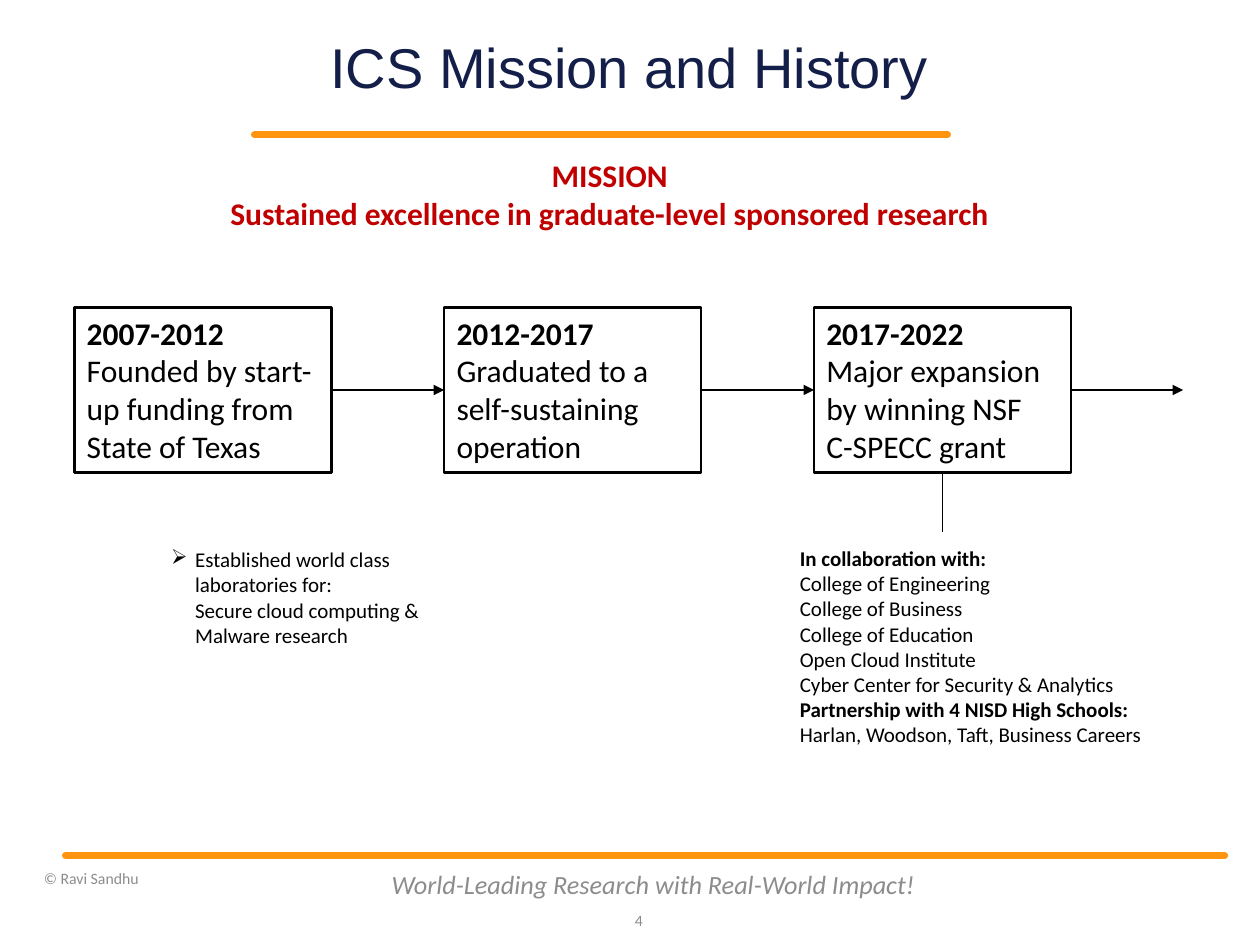
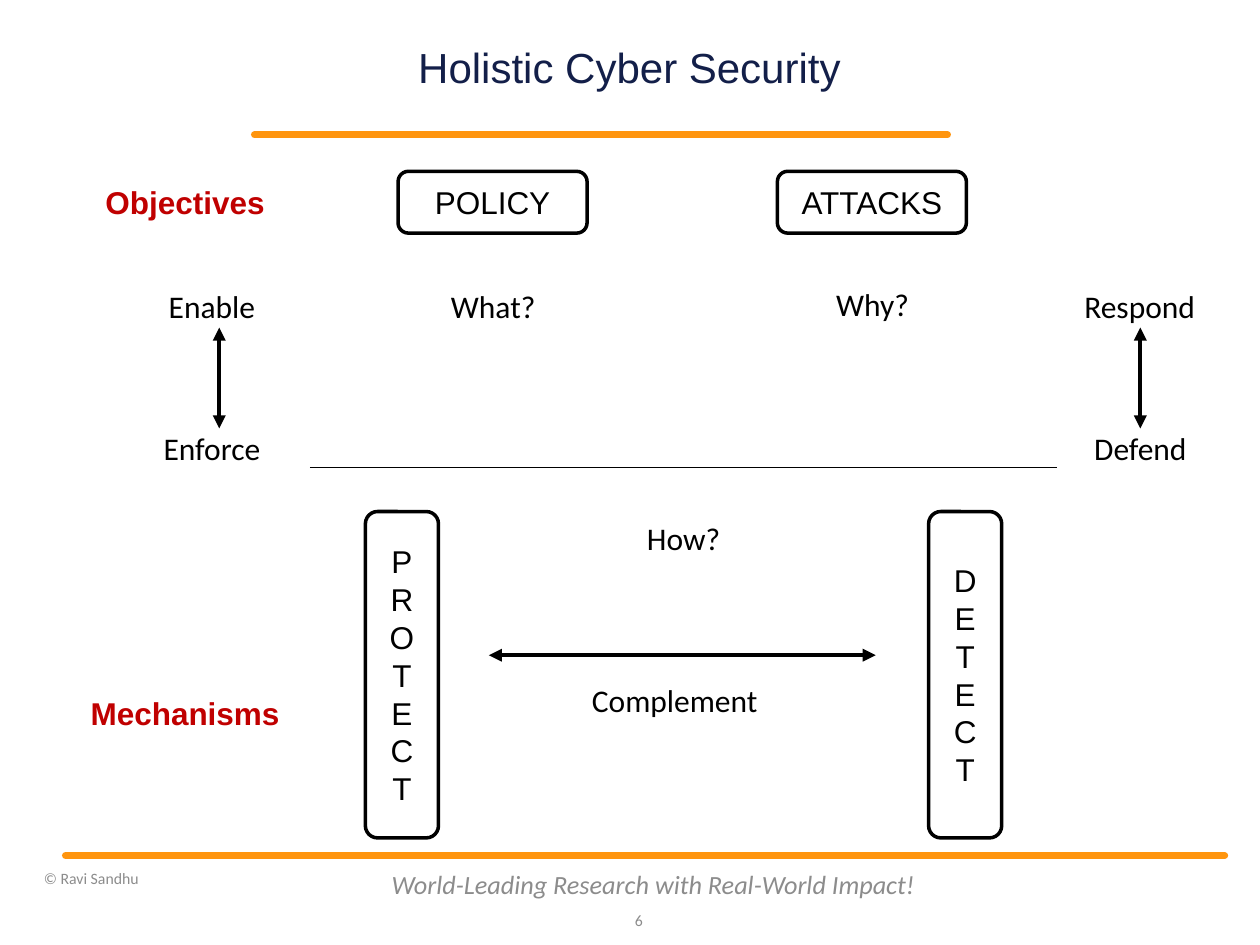
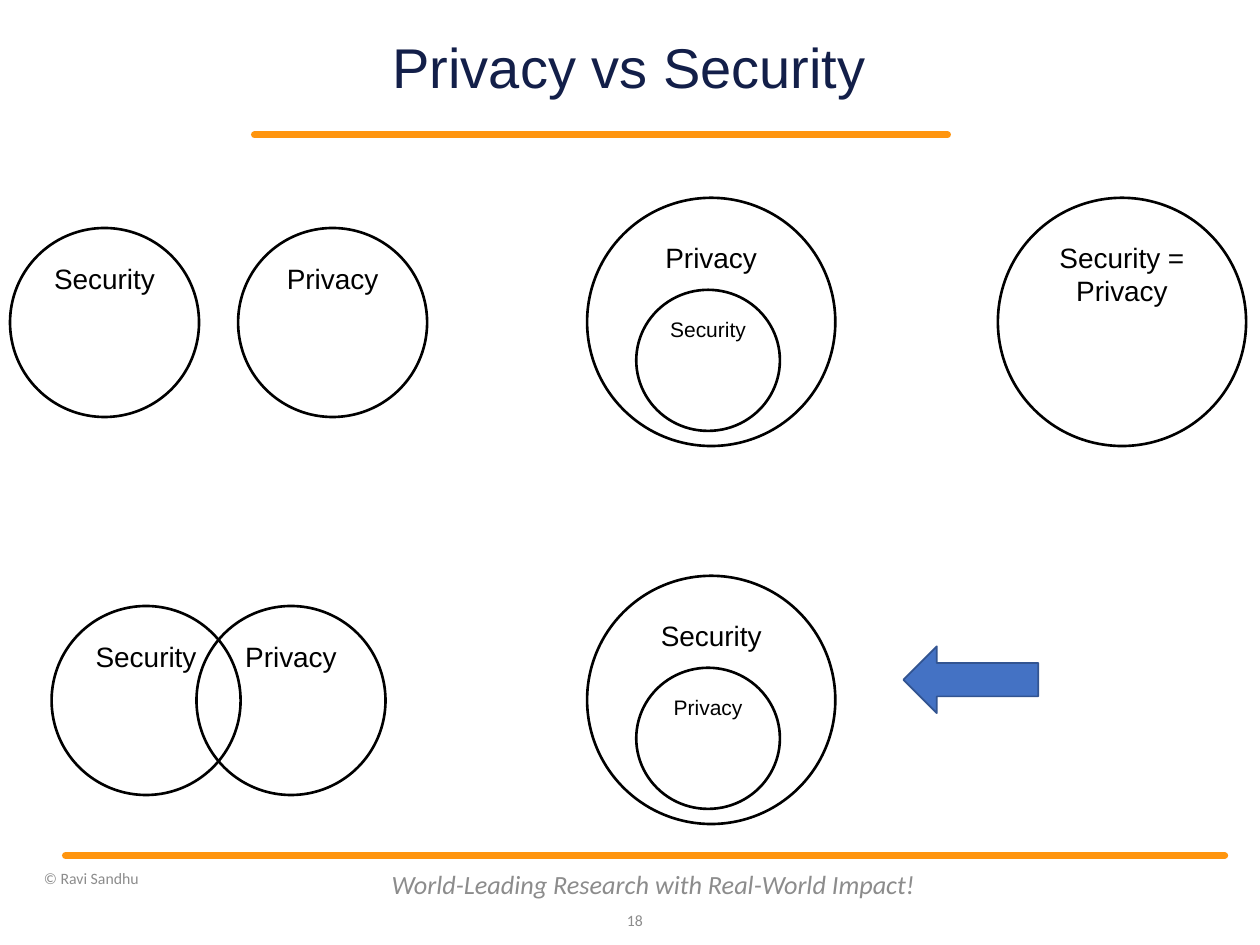
import lxml.etree
import pptx
import pptx.dml.color
import pptx.enum.shapes
import pptx.enum.text
import pptx.oxml.ns
import pptx.util

Inches = pptx.util.Inches
Pt = pptx.util.Pt
RGBColor = pptx.dml.color.RGBColor
SHAPE = pptx.enum.shapes.MSO_SHAPE
ALIGN = pptx.enum.text.PP_ALIGN
ANCHOR = pptx.enum.text.MSO_ANCHOR
qn = pptx.oxml.ns.qn

ORANGE = RGBColor(0xFF, 0x95, 0x0E)
NAVY = RGBColor(0x13, 0x1F, 0x49)
GRAY = RGBColor(0x8C, 0x8C, 0x8C)
RED = RGBColor(0xC0, 0x00, 0x00)
BLACK = RGBColor(0x00, 0x00, 0x00)
WHITE = RGBColor(0xFF, 0xFF, 0xFF)
BLUE = RGBColor(0x44, 0x72, 0xC4)
DARK_BLUE = RGBColor(0x32, 0x54, 0x91)

TITLE = {"name": "Arial", "size": Pt(32), "color": NAVY}
SMALL_TITLE = {**TITLE, "size": Pt(24)}
MOTTO = {"name": "Calibri", "size": Pt(15), "italic": True, "color": GRAY}
FOOTNOTE = {"name": "Calibri", "size": Pt(9), "color": GRAY}
BODY = {"name": "Calibri", "size": Pt(18), "color": BLACK}
BODY_BOLD = {**BODY, "bold": True}
MISSION = {**BODY_BOLD, "color": RED}
DETAIL = {**BODY, "size": Pt(12)}
DETAIL_BOLD = {**DETAIL, "bold": True}
BLOCK = {**BODY, "name": "Arial"}
BLOCK_HEADING = {**BLOCK, "bold": True, "color": RED}
CIRCLE = {**BLOCK, "size": Pt(16)}
INNER_CIRCLE = {**BLOCK, "size": Pt(12)}

CENTERED = {"alignment": ALIGN.CENTER}
LEFT = {"alignment": ALIGN.LEFT}
RIGHT = {"alignment": ALIGN.RIGHT}
MIDDLE = {"vertical_anchor": ANCHOR.MIDDLE, "word_wrap": True}
TOP = {"vertical_anchor": ANCHOR.TOP, "word_wrap": True}
NO_MARGINS = {f"margin_{side}": 0 for side in ("left", "top", "right", "bottom")}


def apply_format(target, values):
    for name, value in values.items():
        if name == "color":
            target.color.rgb = value
        else:
            setattr(target, name, value)


def write(shape, lines, frame_format, paragraph_format):
    """Fill a shape with paragraphs given as (text, font format) pairs."""
    frame = shape.text_frame
    apply_format(frame, frame_format)
    for index, (text, font_format) in enumerate(lines):
        paragraph = frame.add_paragraph() if index else frame.paragraphs[0]
        paragraph.text = text
        apply_format(paragraph, paragraph_format)
        for run in paragraph.runs:
            apply_format(run.font, font_format)
        for line_break in shape.element.iter(qn("a:br")):
            if len(line_break) == 0:
                size = str(int(font_format["size"].pt * 100))
                lxml.etree.SubElement(line_break, qn("a:rPr"), sz=size)


def add_text(slide, box, lines, frame_format=TOP, paragraph_format=CENTERED):
    text_box = slide.shapes.add_textbox(*map(Inches, box))
    write(text_box, lines, frame_format, paragraph_format)
    return text_box


def add_figure(slide, kind, box, fill=None, line=None, weight=1.5):
    figure = slide.shapes.add_shape(kind, *map(Inches, box))
    figure.shadow.inherit = False
    if fill is None:
        figure.fill.background()
    else:
        figure.fill.solid()
        figure.fill.fore_color.rgb = fill
    if line is None:
        figure.line.fill.background()
    else:
        apply_format(figure.line, {"color": line, "width": Pt(weight)})
    return figure


def add_line(slide, start, end, weight, color=BLACK, arrows=(), cap="flat"):
    """Draw a line; arrows lists the ends (headEnd, tailEnd) that get a triangle."""
    line = slide.shapes.add_connector(
        pptx.enum.shapes.MSO_CONNECTOR.STRAIGHT, *map(Inches, (*start, *end)))
    apply_format(line.line, {"color": color, "width": Pt(weight)})
    outline = line.get_or_add_ln()
    outline.set("cap", cap)
    for arrow in arrows:
        lxml.etree.SubElement(outline, qn(f"a:{arrow}"), type="triangle")
    lxml.etree.SubElement(line.element.spPr, qn("a:effectLst"))
    return line


def add_bullet(paragraph, symbol, indent):
    properties = paragraph._p.get_or_add_pPr()
    properties.set("marL", str(Inches(indent)))
    properties.set("indent", str(-Inches(indent)))
    lxml.etree.SubElement(properties, qn("a:buChar"), char=symbol)


def add_block(slide, box, text, font=BLOCK, line=BLACK, stacked=False):
    block = add_figure(slide, SHAPE.ROUNDED_RECTANGLE, box, WHITE, line, 2)
    write(block, [(text, font)], {**MIDDLE, "word_wrap": False}, CENTERED)
    if stacked:
        block.element.txBody.find(qn("a:bodyPr")).set("vert", "wordArtVert")


def add_circle(slide, box, *words, font=CIRCLE):
    circle = add_figure(slide, SHAPE.OVAL, box, line=BLACK)
    write(circle, [(word, font) for word in words],
          {**TOP, "word_wrap": False}, CENTERED)


def add_nested_circles(slide, top, outer, inner):
    add_circle(slide, (5.05, top + 0.73, 1.14, 1.12), inner, font=INNER_CIRCLE)
    add_circle(slide, (4.66, top, 1.97, 1.97), outer)


def start_slide(deck, title, number, title_font=TITLE):
    slide = deck.slides.add_slide(deck.slide_layouts[6])
    for left, right, y in ((2.02, 7.52, 1.07), (0.52, 9.72, 6.79)):
        add_line(slide, (left, y), (right, y), 4, ORANGE, cap="rnd")
    add_text(slide, (3, 6.82, 4.37, 0.4),
             [("World-Leading Research with Real-World Impact!", MOTTO)], MIDDLE)
    add_text(slide, (4.8, 7.1, 0.4, 0.4), [(str(number), FOOTNOTE)], MIDDLE, RIGHT)
    add_text(slide, (0.25, 6.79, 2.75, 0.36),
             [("© Ravi Sandhu", FOOTNOTE)], MIDDLE, LEFT)
    add_text(slide, (2.37, 0.3, 5.25, 0.51), [(title, title_font)],
             {**MIDDLE, **NO_MARGINS}, {**CENTERED, "line_spacing": 0.9})
    return slide


def build_history(deck):
    slide = start_slide(deck, "ICS Mission and History", 4)
    add_text(slide, (1.66, 1.19, 6.36, 0.71), [
        ("MISSION", MISSION),
        ("Sustained excellence in graduate-level sponsored research", MISSION)])

    periods = [
        ("2007-2012", "Founded by start-up funding from State of Texas"),
        ("2012-2017", "Graduated to a self-sustaining operation"),
        ("2017-2022", "Major expansion by winning NSF \nC-SPECC grant"),
    ]
    stages = []
    for index, (years, event) in enumerate(periods):
        box = (0.59 + index * 2.935, 2.44, 2.04, 1.31)
        stage = add_figure(slide, SHAPE.RECTANGLE, box, line=BLACK)
        write(stage, [(years, BODY_BOLD), (event, BODY)], TOP, LEFT)
        stages.append(stage)
    for index, stage in enumerate(stages):
        x = 2.63 + index * 2.935
        arrow = add_line(slide, (x, 3.095), (x + 0.89, 3.095), 1.5,
                         arrows=["tailEnd"])
        arrow.begin_connect(stage, 3)
        if index + 1 < len(stages):
            arrow.end_connect(stages[index + 1], 1)
    partners_line = add_line(slide, (7.48, 3.75), (7.48, 4.22), 1)
    partners_line.begin_connect(stages[-1], 2)

    add_text(slide, (6.25, 4.28, 2.93, 1.72), [
        ("In collaboration with:", DETAIL_BOLD),
        ("College of Engineering", DETAIL),
        ("College of Business", DETAIL),
        ("College of Education", DETAIL),
        ("Open Cloud Institute", DETAIL),
        ("Cyber Center for Security & Analytics", DETAIL),
        ("Partnership with 4 NISD High Schools:", DETAIL_BOLD),
        ("Harlan, Woodson, Taft, Business Careers", DETAIL),
    ], paragraph_format=LEFT)
    laboratories = add_text(slide, (1.26, 4.29, 2.78, 1.11), [(
        "Established world class laboratories for:\n"
        "Secure cloud computing &\nMalware research", DETAIL)],
        paragraph_format=LEFT)
    add_bullet(laboratories.text_frame.paragraphs[0], "➢", 0.19)


def build_holistic(deck):
    slide = start_slide(deck, "Holistic Cyber Security", 6, SMALL_TITLE)
    for left, mechanism in ((2.9, "PROTECT"), (7.37, "DETECT")):
        add_block(slide, (left, 4.06, 0.58, 2.59), mechanism, stacked=True)
    for left, objective in ((3.16, "POLICY"), (6.17, "ATTACKS")):
        add_block(slide, (left, 1.36, 1.5, 0.49), objective)
    for top, heading in ((1.36, "Objectives"), (5.41, "Mechanisms")):
        add_block(slide, (0.72, top, 1.5, 0.49), heading, BLOCK_HEADING, None)

    labels = [
        ("Complement", 4.6, 5.36, 1.63, LEFT),
        ("How?", 5, 4.07, 0.85, CENTERED),
        ("What?", 3.45, 2.23, 0.93, CENTERED),
        ("Why?", 6.5, 2.21, 0.85, CENTERED),
        ("Enforce", 1.2, 3.36, 1.07, LEFT),
        ("Enable", 1.24, 2.23, 0.99, LEFT),
        ("Defend", 8.54, 3.36, 1.02, CENTERED),
        ("Respond", 8.44, 2.23, 1.21, CENTERED),
    ]
    for text, left, top, width, alignment in labels:
        add_text(slide, (left, top, width, 0.4), [(text, BODY)],
                 paragraph_format=alignment)

    add_line(slide, (2.46, 3.71), (8.39, 3.71), 0.75)
    for start, end in (((3.88, 5.2), (6.95, 5.2)),
                       ((1.74, 3.4), (1.74, 2.6)),
                       ((9.05, 3.4), (9.05, 2.6))):
        add_line(slide, start, end, 2.5, arrows=["headEnd", "tailEnd"])


def build_privacy(deck):
    slide = start_slide(deck, "Privacy vs Security", 18)
    for top, security_left, privacy_left in ((1.81, 0.08, 1.89), (4.81, 0.41, 1.56)):
        add_circle(slide, (security_left, top, 1.5, 1.5), "Security")
        add_circle(slide, (privacy_left, top, 1.5, 1.5), "Privacy")
    add_nested_circles(slide, 1.57, "Privacy", "Security")
    add_nested_circles(slide, 4.57, "Security", "Privacy")
    add_circle(slide, (7.92, 1.57, 1.97, 1.97), "Security =", "Privacy")
    add_figure(slide, SHAPE.LEFT_ARROW, (7.17, 5.13, 1.07, 0.53),
               BLUE, DARK_BLUE, 1)


def main():
    deck = pptx.Presentation()
    deck.slide_width, deck.slide_height = Inches(10), Inches(7.5)
    build_history(deck)
    build_holistic(deck)
    build_privacy(deck)
    deck.save("out.pptx")


if __name__ == "__main__":
    main()
